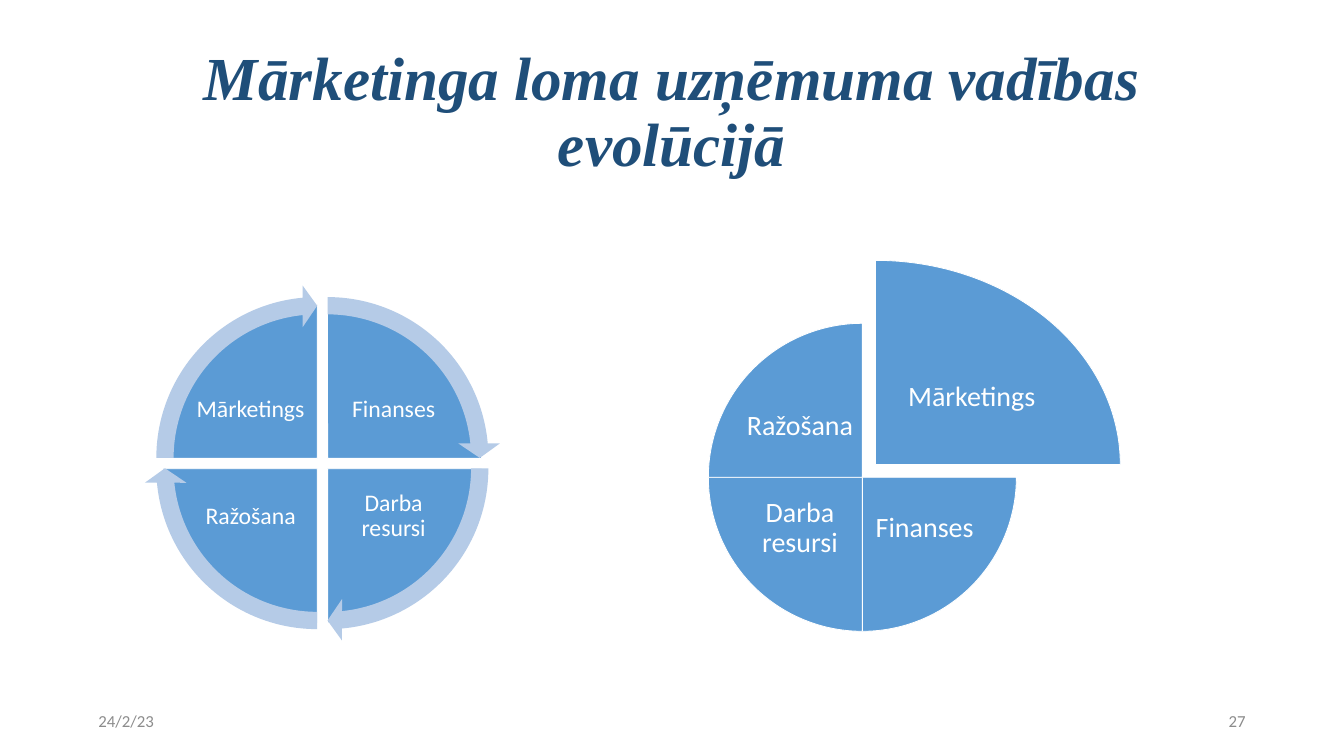
"""Build a slide on the role of marketing in the evolution of company management."""
from dataclasses import dataclass

from pptx import Presentation
from pptx import util as u
from pptx.dml.color import RGBColor
from pptx.enum import shapes, text

COLORS = {"title": "1F4E79", "sector": "5B9BD5", "arrow": "B5CBE7",
          "white": "FFFFFF", "footer": "8C8C8C"}
QUARTER = 54
FULL_TURN = 4 * QUARTER
PIE = 362.88
ARROW = 407.52


@dataclass(frozen=True)
class Box:
    left: float
    top: float
    width: float
    height: float

    def lengths(self) -> tuple:
        return tuple(u.Pt(n) for n in (self.left, self.top, self.width, self.height))


@dataclass(frozen=True)
class Style:
    size: float
    color: str = "white"
    font: str = "Calibri"
    align: text.PP_ALIGN = text.PP_ALIGN.CENTER
    spacing: float = 0.9
    inset_x: float = 7.2
    inset_y: float = 3.6
    emphasis: bool = False


@dataclass(frozen=True)
class Sector:
    name: str
    quarter: int
    pie: Box
    label: Box


def rgb(name: str) -> RGBColor:
    return RGBColor.from_string(COLORS[name])


def add_words(slide, words: str, box: Box, style: Style) -> None:
    frame = slide.shapes.add_textbox(*box.lengths()).text_frame
    frame.word_wrap = True
    frame.vertical_anchor = text.MSO_ANCHOR.MIDDLE
    frame.margin_left = frame.margin_right = u.Pt(style.inset_x)
    frame.margin_top = frame.margin_bottom = u.Pt(style.inset_y)
    paragraph = frame.paragraphs[0]
    paragraph.alignment = style.align
    paragraph.line_spacing = style.spacing
    run = paragraph.add_run()
    run.text = words
    run.font.name = style.font
    run.font.size = u.Pt(style.size)
    run.font.bold = run.font.italic = style.emphasis
    run.font.color.rgb = rgb(style.color)


def add_figure(slide, kind: shapes.MSO_SHAPE, box: Box, color: str, adjustments: list[float]):
    figure = slide.shapes.add_shape(kind, *box.lengths())
    figure.shadow.inherit = False
    figure.fill.solid()
    figure.fill.fore_color.rgb = rgb(color)
    figure.line.fill.background()
    for index, value in enumerate(adjustments):
        figure.adjustments[index] = value
    return figure


def add_sector(slide, sector: Sector, style: Style) -> None:
    start = sector.quarter * QUARTER
    pie = add_figure(slide, shapes.MSO_SHAPE.PIE, sector.pie, "sector",
                     [start, (start + QUARTER) % FULL_TURN])
    pie.line.color.rgb = rgb("white")
    pie.line.width = u.Pt(1)
    add_words(slide, sector.name, sector.label, style)


def add_cycle_arrow(slide, sector: Sector) -> None:
    start = sector.quarter * QUARTER
    margin = (ARROW - PIE) / 2
    box = Box(sector.pie.left - margin, sector.pie.top - margin - 0.5, ARROW, ARROW)
    add_figure(slide, shapes.MSO_SHAPE.CIRCULAR_ARROW, box, "arrow",
               [0.05, 3.28, start + 50.73, start, 0.06])


def cycle_sector(name: str, quarter: int) -> Sector:
    right, lower = quarter in (0, 3), quarter in (0, 1)
    pie = Box(192.24 + 12.24 * right, 358.56 + 12.24 * lower, PIE, PIE)
    label = Box(228.24 + 168.48 * right, 433.44 + 125.28 * lower, 133.92, 99.36)
    return Sector(name, quarter, pie, label)


def role_sector(name: str, quarter: int) -> Sector:
    right, lower = quarter in (0, 3), quarter in (0, 1)
    label = Box(875.52 + 146.88 * right, 447.84 + 120.96 * lower, 133.92, 108)
    return Sector(name, quarter, Box(834.48, 380.88, PIE, PIE), label)


def main() -> None:
    deck = Presentation()
    deck.slide_width, deck.slide_height = u.Pt(1583.28), u.Pt(890.64)
    slide = deck.slides.add_slide(deck.slide_layouts[6])

    add_words(slide, "Mārketinga loma uzņēmuma vadības evolūcijā",
              Box(108.72, 47.52, 1365.12, 172.08),
              Style(72, "title", "Times New Roman", emphasis=True))
    for words, left, align in (("24/2/23", 108.72, text.PP_ALIGN.LEFT),
                               ("27", 1118.16, text.PP_ALIGN.RIGHT)):
        add_words(slide, words, Box(left, 825.12, 356.4, 47.52),
                  Style(19.8, "footer", align=align, spacing=1.0))

    equal_roles = [cycle_sector(name, quarter) for name, quarter in (
        ("Finanses", 3), ("Darba resursi", 0), ("Ražošana", 1), ("Mārketings", 2))]
    for sector in equal_roles:
        add_sector(slide, sector, Style(28, inset_x=2.8, inset_y=2.8))
    for sector in equal_roles:
        add_cycle_arrow(slide, sector)

    leading_role = Sector("Mārketings", 3, Box(743.04, 306.72, 576.72, 480.96),
                          Box(1038.24, 396, 213.12, 143.28))
    other_roles = [role_sector(name, quarter) for quarter, name in enumerate(
        ("Finanses", "Darba resursi", "Ražošana"))]
    for sector in (leading_role, *other_roles):
        add_sector(slide, sector, Style(33, inset_x=3.3, inset_y=3.3))

    deck.save("out.pptx")


if __name__ == "__main__":
    main()
